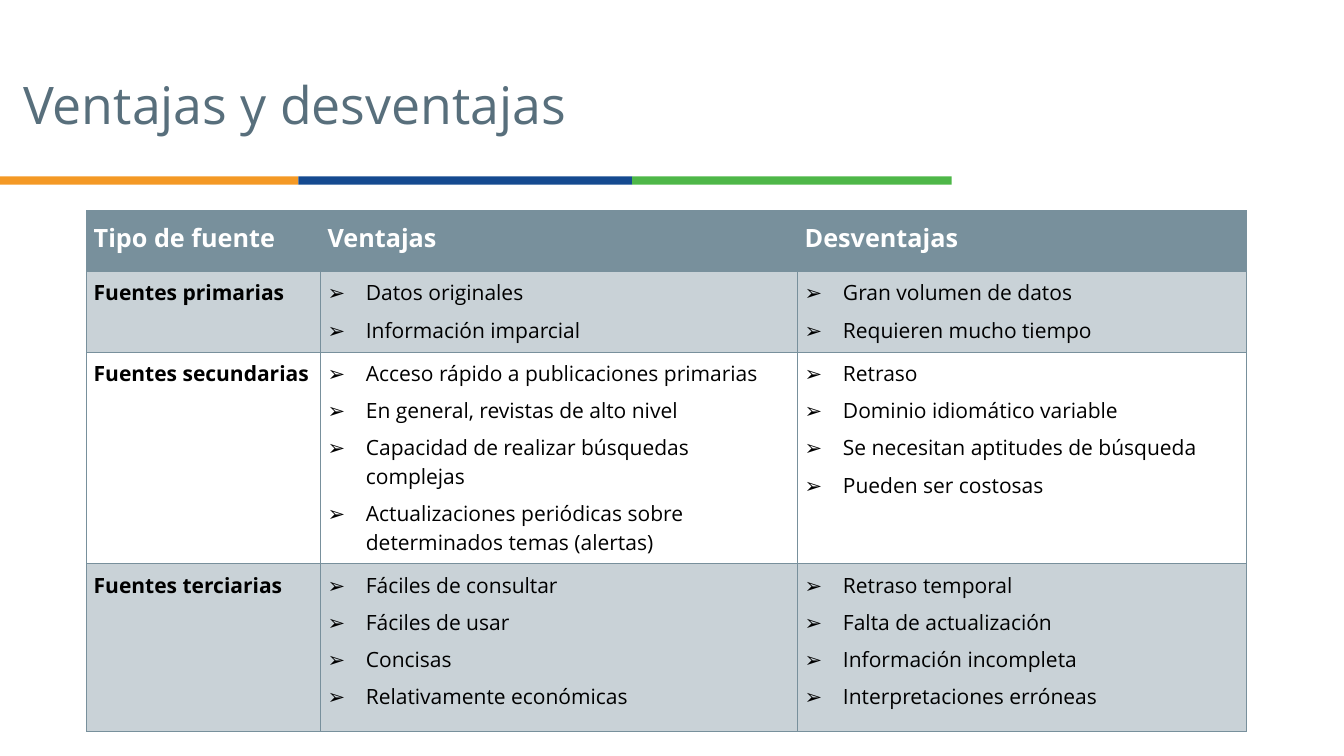
import dataclasses

import pptx
import pptx.dml.color
import pptx.enum.shapes
import pptx.enum.text
import pptx.oxml
import pptx.oxml.ns
import pptx.util


@dataclasses.dataclass(frozen=True)
class Theme:
    """Colours, font and type sizes of the slide."""
    font: str = "Open Sans"
    heading: str = "586F7C"
    accent: str = "78909C"
    white: str = "FFFFFF"
    text: str = "000000"
    stripes: tuple = ("F49925", "154A90", "4EB748")
    band_alpha: int = 40
    title_size: int = 37
    header_size: int = 18
    body_size: int = 15


def rgb(colour):
    """Return a hex colour as an RGBColor."""
    return pptx.dml.color.RGBColor.from_string(colour)


def element(xml):
    """Parse a drawing element, with the namespace filled in."""
    namespace = pptx.oxml.ns.nsdecls("a")
    return pptx.oxml.parse_xml(xml.replace(" ", f" {namespace} ", 1))


class SlideBuilder:
    """Draws styled elements, placed in percent of the slide's size."""

    def __init__(self, presentation, theme):
        """Add a slide that has only a title."""
        self.theme = theme
        self.width = presentation.slide_width
        self.height = presentation.slide_height
        self.slide = presentation.slides.add_slide(presentation.slide_layouts[5])

    def x(self, share):
        """Turn a share of the width into a length."""
        return round(self.width * share / 100)

    def y(self, share):
        """Turn a share of the height into a length."""
        return round(self.height * share / 100)

    def run(self, paragraph, text, size, colour, bold=False):
        """Add one formatted run."""
        run = paragraph.add_run()
        run.text = text
        run.font.name = self.theme.font
        run.font.size = pptx.util.Pt(size)
        run.font.bold = bold
        run.font.color.rgb = rgb(colour)

    def title(self, text, left, top, width, height):
        """Place and fill the title placeholder."""
        heading = self.slide.shapes.title
        heading.left, heading.top = self.x(left), self.y(top)
        heading.width, heading.height = self.x(width), self.y(height)
        frame = heading.text_frame
        frame.word_wrap = True
        frame.auto_size = pptx.enum.text.MSO_AUTO_SIZE.NONE
        frame.vertical_anchor = pptx.enum.text.MSO_ANCHOR.MIDDLE
        frame.margin_left = pptx.util.Inches(0.23)
        paragraph = frame.paragraphs[0]
        paragraph.alignment = pptx.enum.text.PP_ALIGN.LEFT
        paragraph.line_spacing = 0.9
        self.run(paragraph, text, self.theme.title_size, self.theme.heading)

    def stripe(self, widths, top, height):
        """Draw coloured bars end to end from the left edge."""
        left = 0
        for width, colour in zip(widths, self.theme.stripes):
            bar = self.slide.shapes.add_shape(
                pptx.enum.shapes.MSO_SHAPE.RECTANGLE,
                self.x(left), self.y(top), self.x(width), self.y(height))
            bar.shadow.inherit = False
            bar.fill.solid()
            bar.fill.fore_color.rgb = rgb(colour)
            bar.line.fill.background()
            left += width

    def frame_cell(self, cell):
        """Set a cell's margins and borders."""
        cell.margin_left = cell.margin_right = pptx.util.Inches(0.07)
        cell.margin_top = cell.margin_bottom = pptx.util.Inches(0.07)
        properties = cell._tc.get_or_add_tcPr()
        for side in "LRTB":
            properties.append(element(
                f'<a:ln{side} w="9525"><a:solidFill>'
                f'<a:srgbClr val="{self.theme.accent}"/></a:solidFill></a:ln{side}>'))

    def fill_cell(self, cell, row):
        """Fill the header solidly and every other body row lightly."""
        if row and row % 2 == 0:
            cell.fill.background()
            return
        cell.fill.solid()
        cell.fill.fore_color.rgb = rgb(self.theme.accent)
        if row:
            solid = cell._tc.tcPr.find(pptx.oxml.ns.qn("a:solidFill"))
            solid[0].append(element(f'<a:alpha val="{self.theme.band_alpha * 1000}"/>'))

    def bullet(self, paragraph):
        """Give a paragraph an arrow bullet and hanging indent."""
        properties = paragraph._p.get_or_add_pPr()
        indent = pptx.util.Inches(0.38)
        properties.set("marL", str(indent))
        properties.set("indent", str(-indent))
        properties.append(element(
            f'<a:buClr ><a:srgbClr val="{self.theme.text}"/></a:buClr>'))
        properties.append(element(f'<a:buFont typeface="{self.theme.font}"/>'))
        properties.append(element('<a:buChar char="➢"/>'))

    def write_cell(self, cell, content, row, column):
        """Write a header, a row label or a bulleted list."""
        theme = self.theme
        if row == 0:
            paragraph = cell.text_frame.paragraphs[0]
            paragraph.line_spacing = 1.07
            self.run(paragraph, content, theme.header_size, theme.white, True)
            return
        items = content if column else [content]
        for index, item in enumerate(items):
            frame = cell.text_frame
            paragraph = frame.add_paragraph() if index else frame.paragraphs[0]
            if column:
                self.bullet(paragraph)
            if index:
                paragraph.space_before = pptx.util.Pt(3)
            paragraph.space_after = pptx.util.Pt(3)
            self.run(paragraph, item, theme.body_size, theme.text, column == 0)

    def table(self, rows, left, top, widths, heights):
        """Draw a bordered table with a header row."""
        table = self.slide.shapes.add_table(
            len(rows), len(widths), self.x(left), self.y(top),
            self.x(sum(widths)), self.y(sum(heights))).table
        table.horz_banding = False
        for column, width in zip(table.columns, widths):
            column.width = self.x(width)
        for row, (contents, height) in enumerate(zip(rows, heights)):
            table.rows[row].height = self.y(height)
            for column, content in enumerate(contents):
                cell = table.cell(row, column)
                self.frame_cell(cell)
                self.fill_cell(cell, row)
                self.write_cell(cell, content, row, column)


SOURCES = [
    ("Tipo de fuente", "Ventajas", "Desventajas"),
    ("Fuentes primarias",
     ["Datos originales", "Información imparcial"],
     ["Gran volumen de datos", "Requieren mucho tiempo"]),
    ("Fuentes secundarias",
     ["Acceso rápido a publicaciones primarias",
      "En general, revistas de alto nivel",
      "Capacidad de realizar búsquedas complejas",
      "Actualizaciones periódicas sobre determinados temas (alertas)"],
     ["Retraso", "Dominio idiomático variable",
      "Se necesitan aptitudes de búsqueda", "Pueden ser costosas"]),
    ("Fuentes terciarias",
     ["Fáciles de consultar", "Fáciles de usar", "Concisas",
      "Relativamente económicas"],
     ["Retraso temporal", "Falta de actualización",
      "Información incompleta", "Interpretaciones erróneas"]),
]


def main():
    """Build and save the slide."""
    presentation = pptx.Presentation()
    presentation.slide_width = pptx.util.Inches(13.33)
    presentation.slide_height = pptx.util.Inches(7.5)
    builder = SlideBuilder(presentation, Theme())
    builder.stripe((22.2, 24.83, 23.78), top=23.35, height=1.07)
    builder.title("Ventajas y desventajas", 0, 6.4, 67.44, 15.73)
    builder.table(SOURCES, left=6.45, top=27.9,
                  widths=(17.4, 35.5, 33.4), heights=(8, 10.67, 27.9, 22.13))
    presentation.save("out.pptx")


if __name__ == "__main__":
    main()
